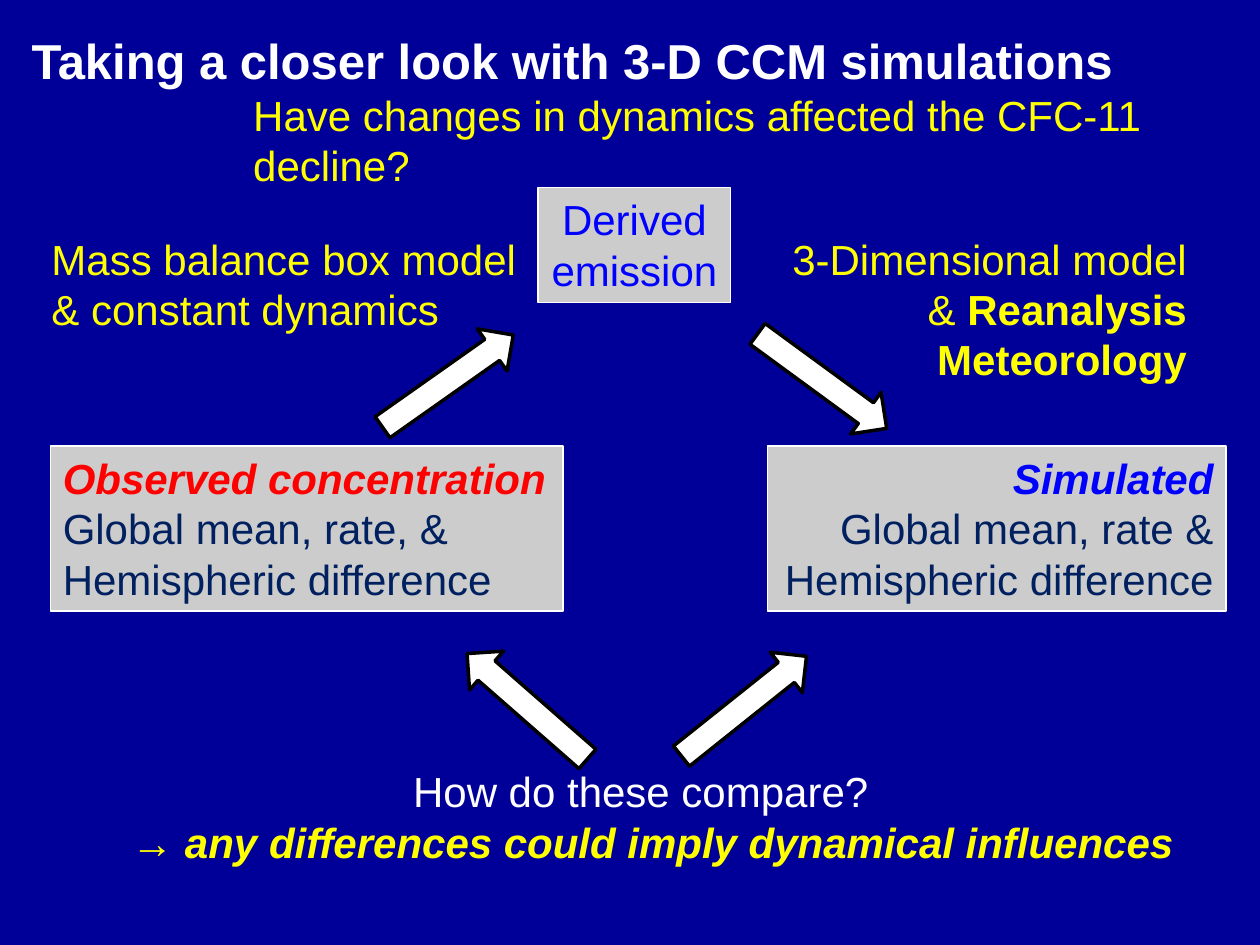
from dataclasses import dataclass

from pptx import Presentation
from pptx.dml.color import RGBColor
from pptx.enum import shapes, text
from pptx.util import Inches, Pt

COLORS = {
    "background": "000099",
    "white": "FFFFFF",
    "black": "000000",
    "yellow": "FFFF00",
    "gray": "CCCCCC",
    "red": "FF0000",
    "blue": "0000FF",
    "navy": "002060",
}
LEFT, CENTER, RIGHT = text.PP_ALIGN.LEFT, text.PP_ALIGN.CENTER, text.PP_ALIGN.RIGHT


@dataclass
class Line:
    wording: str
    color: str
    bold: bool = False
    italic: bool = False
    size: int = 24
    indent: float = 0
    bold_ending: str = ""


@dataclass
class Block:
    left: float
    top: float
    width: float
    height: float
    align: text.PP_ALIGN
    lines: list[Line]
    right_margin: float = 0.1


@dataclass
class Arrow:
    left: float
    top: float
    rotation: float


def color(name: str) -> RGBColor:
    return RGBColor.from_string(COLORS[name])


def place(shape, block: Block) -> None:
    shape.left, shape.top = Inches(block.left), Inches(block.top)
    shape.width, shape.height = Inches(block.width), Inches(block.height)


def paint(shape, fill: str, line: str, line_width: float) -> None:
    shape.shadow.inherit = False
    shape.fill.solid()
    shape.fill.fore_color.rgb = color(fill)
    shape.line.color.rgb = color(line)
    shape.line.width = Pt(line_width)


def write(shape, block: Block) -> None:
    frame = shape.text_frame
    frame.word_wrap = True
    frame.auto_size = text.MSO_AUTO_SIZE.NONE
    frame.vertical_anchor = text.MSO_ANCHOR.TOP
    frame.margin_right = Inches(block.right_margin)
    for index, line in enumerate(block.lines):
        paragraph = frame.add_paragraph() if index else frame.paragraphs[0]
        paragraph.alignment = block.align
        paragraph.line_spacing = 1.0
        paragraph.space_before = Pt(0)
        font = paragraph.font
        font.name, font.size = "Arial", Pt(line.size)
        font.bold, font.italic = line.bold, line.italic
        font.color.rgb = color(line.color)
        if line.indent:
            paragraph._p.get_or_add_pPr().set("marL", str(Inches(line.indent)))
        paragraph.add_run().text = line.wording
        if line.bold_ending:
            ending = paragraph.add_run()
            ending.text = line.bold_ending
            ending.font.bold = True


def add_box(slide, block: Block) -> None:
    box = slide.shapes.add_shape(shapes.MSO_SHAPE.RECTANGLE, 0, 0, 0, 0)
    place(box, block)
    paint(box, "gray", "white", 0.75)
    write(box, block)


def add_label(slide, block: Block) -> None:
    label = slide.shapes.add_textbox(0, 0, 0, 0)
    place(label, block)
    write(label, block)


def add_arrow(slide, arrow: Arrow) -> None:
    shape = slide.shapes.add_shape(
        shapes.MSO_SHAPE.RIGHT_ARROW,
        Inches(arrow.left), Inches(arrow.top), Inches(1.27), Inches(0.41))
    shape.rotation = arrow.rotation
    paint(shape, "white", "black", 2)


TITLE = Block(0.15, 0.19, 9.58, 0.98, LEFT, [
    Line("Taking a closer look with 3-D CCM simulations", "white", bold=True, size=28),
    Line("Have changes in dynamics affected the CFC-11 decline?", "yellow", indent=1.76),
])
BOXES = [
    Block(0.4, 3.54, 4.07, 1.31, LEFT, [
        Line("Observed concentration", "red", bold=True, italic=True),
        Line("Global mean, rate, &", "navy"),
        Line("Hemispheric difference", "navy"),
    ]),
    Block(4.27, 1.49, 1.53, 0.91, CENTER, [
        Line("Derived", "blue"),
        Line("emission", "blue"),
    ]),
    Block(6.09, 3.54, 3.64, 1.31, RIGHT, [
        Line("Simulated", "blue", bold=True, italic=True),
        Line("Global mean, rate &", "navy"),
        Line("Hemispheric difference", "navy"),
    ]),
]
LABELS = [
    Block(0.31, 1.8, 4.02, 0.91, LEFT, [
        Line("Mass balance box model", "yellow"),
        Line("& constant dynamics", "yellow"),
    ]),
    Block(6.15, 1.8, 3.46, 2.12, RIGHT, [
        Line("3-Dimensional model", "yellow"),
        Line("& ", "yellow", bold_ending="Reanalysis"),
        Line("Meteorology", "yellow", bold=True),
    ], right_margin=0.19),
    Block(0.72, 6.03, 8.73, 0.91, CENTER, [
        Line("How do these compare?", "white"),
        Line("→ any differences could imply dynamical influences", "yellow",
             bold=True, italic=True, indent=0.19),
    ]),
]
ARROWS = [
    Arrow(2.92, 2.82, 324.8),
    Arrow(5.89, 2.82, 36.2),
    Arrow(3.55, 5.4, 221.2),
    Arrow(5.27, 5.4, 321.4),
]


def main() -> None:
    presentation = Presentation()
    presentation.slide_width, presentation.slide_height = Inches(10), Inches(7.5)
    slide = presentation.slides.add_slide(presentation.slide_layouts[5])
    slide.background.fill.solid()
    slide.background.fill.fore_color.rgb = color("background")

    # Title with its question
    place(slide.shapes.title, TITLE)
    write(slide.shapes.title, TITLE)

    # Cycle of boxes, arrows and labels
    for box in BOXES:
        add_box(slide, box)
    for arrow in ARROWS:
        add_arrow(slide, arrow)
    for label in LABELS:
        add_label(slide, label)

    presentation.save("out.pptx")


if __name__ == "__main__":
    main()
